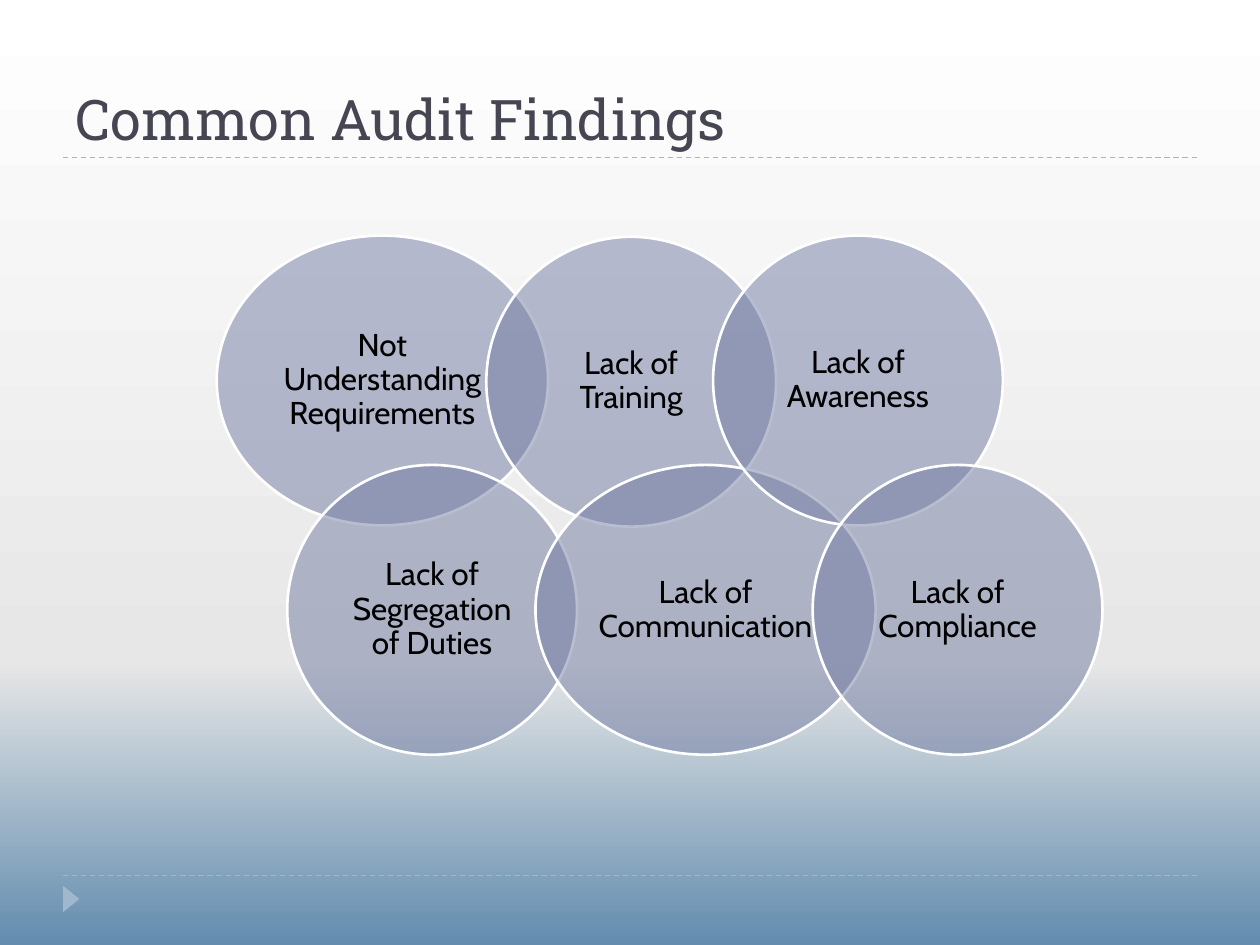
from copy import deepcopy
from typing import NamedTuple

from pptx import Presentation
from pptx.dml.color import RGBColor
from pptx.enum.dml import MSO_LINE
from pptx.enum.shapes import MSO_CONNECTOR, MSO_SHAPE
from pptx.enum.text import MSO_ANCHOR, PP_ALIGN
from pptx.oxml.ns import qn
from pptx.slide import Slide
from pptx.util import Inches, Pt
from lxml.etree import SubElement

WHITE = RGBColor(0xFF, 0xFF, 0xFF)
BLACK = RGBColor(0x00, 0x00, 0x00)
TITLE_COLOR = RGBColor(0x46, 0x46, 0x53)
ACCENT = RGBColor(0x9F, 0xB8, 0xCD)
BUBBLE_FILL = RGBColor(0x72, 0x7C, 0xA3)
BACKGROUND_STOPS = (
    (0.0, RGBColor(0x63, 0x8C, 0xAE)),
    (0.3, RGBColor(0xE7, 0xE7, 0xE7)),
    (1.0, WHITE),
)

BUBBLE_HEIGHT = 2.3
BUBBLE_INSET = Inches(0.07)
TOP_ROW = 1.87
BOTTOM_ROW = 3.69


class Finding(NamedTuple):
    text: str
    left: float
    top: float
    width: float = BUBBLE_HEIGHT


# Back to front: the two rows alternate.
FINDINGS = (
    Finding("Not Understanding Requirements", 1.72, TOP_ROW, 2.63),
    Finding("Lack of Segregation of Duties", 2.28, BOTTOM_ROW),
    Finding("Lack of Training", 3.86, TOP_ROW + 0.01),
    Finding("Lack of Communication", 4.25, BOTTOM_ROW, 2.7),
    Finding("Lack of Awareness", 5.66, TOP_ROW),
    Finding("Lack of Compliance", 6.45, BOTTOM_ROW),
)


def paint_background(slide: Slide) -> None:
    fill = slide.background.fill
    fill.gradient()
    fill.gradient_angle = 90
    stop_list = next(slide.element.iter(qn("a:gsLst")))
    stop_list.append(deepcopy(stop_list[-1]))
    for stop, (position, color) in zip(fill.gradient_stops, BACKGROUND_STOPS):
        stop.position = position
        stop.color.rgb = color


def add_rule(slide: Slide, top: float) -> None:
    """Draw a dashed horizontal line between the side margins."""
    rule = slide.shapes.add_connector(
        MSO_CONNECTOR.STRAIGHT, Inches(0.5), Inches(top), Inches(9.5), Inches(top)
    )
    rule.line.color.rgb = ACCENT
    rule.line.width = Pt(0.75)
    rule.line.dash_style = MSO_LINE.DASH
    SubElement(rule.element.spPr, qn("a:effectLst"))


def add_footer_marker(slide: Slide) -> None:
    marker = slide.shapes.add_shape(
        MSO_SHAPE.ISOSCELES_TRIANGLE, Inches(0.46), Inches(7.07), Inches(0.21), Inches(0.13)
    )
    marker.rotation = 90
    marker.shadow.inherit = False
    marker.fill.solid()
    marker.fill.fore_color.rgb = ACCENT
    marker.line.fill.background()


def add_title(slide: Slide, text: str) -> None:
    title = slide.shapes.add_textbox(Inches(0.5), Inches(0.17), Inches(9), Inches(1.08))
    frame = title.text_frame
    frame.word_wrap = True
    frame.vertical_anchor = MSO_ANCHOR.BOTTOM
    paragraph = frame.paragraphs[0]
    paragraph.text = text
    paragraph.font.name = "Roboto Slab"
    paragraph.font.size = Pt(32)
    paragraph.font.color.rgb = TITLE_COLOR


def add_bubble(slide: Slide, finding: Finding) -> None:
    """Draw a half-transparent ellipse with its finding centred inside."""
    bubble = slide.shapes.add_shape(
        MSO_SHAPE.OVAL,
        Inches(finding.left),
        Inches(finding.top),
        Inches(finding.width),
        Inches(BUBBLE_HEIGHT),
    )
    bubble.shadow.inherit = False
    bubble.fill.solid()
    bubble.fill.fore_color.rgb = BUBBLE_FILL
    fill_color = bubble.element.spPr.find(qn("a:solidFill")).find(qn("a:srgbClr"))
    SubElement(fill_color, qn("a:alpha"), val="50000")
    bubble.line.color.rgb = WHITE
    bubble.line.width = Pt(1.5)

    frame = bubble.text_frame
    frame.word_wrap = True
    frame.vertical_anchor = MSO_ANCHOR.MIDDLE
    frame.margin_left = frame.margin_right = BUBBLE_INSET
    frame.margin_top = frame.margin_bottom = BUBBLE_INSET
    paragraph = frame.paragraphs[0]
    paragraph.text = finding.text
    paragraph.alignment = PP_ALIGN.CENTER
    paragraph.line_spacing = 0.9
    paragraph.font.name = "Cabin"
    paragraph.font.size = Pt(18)
    paragraph.font.color.rgb = BLACK


def main() -> None:
    presentation = Presentation()
    presentation.slide_width = Inches(10)
    presentation.slide_height = Inches(7.5)
    slide = presentation.slides.add_slide(presentation.slide_layouts[6])

    paint_background(slide)
    for top in (6.95, 1.25):
        add_rule(slide, top)
    add_footer_marker(slide)
    add_title(slide, "Common Audit Findings")
    for finding in FINDINGS:
        add_bubble(slide, finding)

    presentation.save("out.pptx")


if __name__ == "__main__":
    main()
